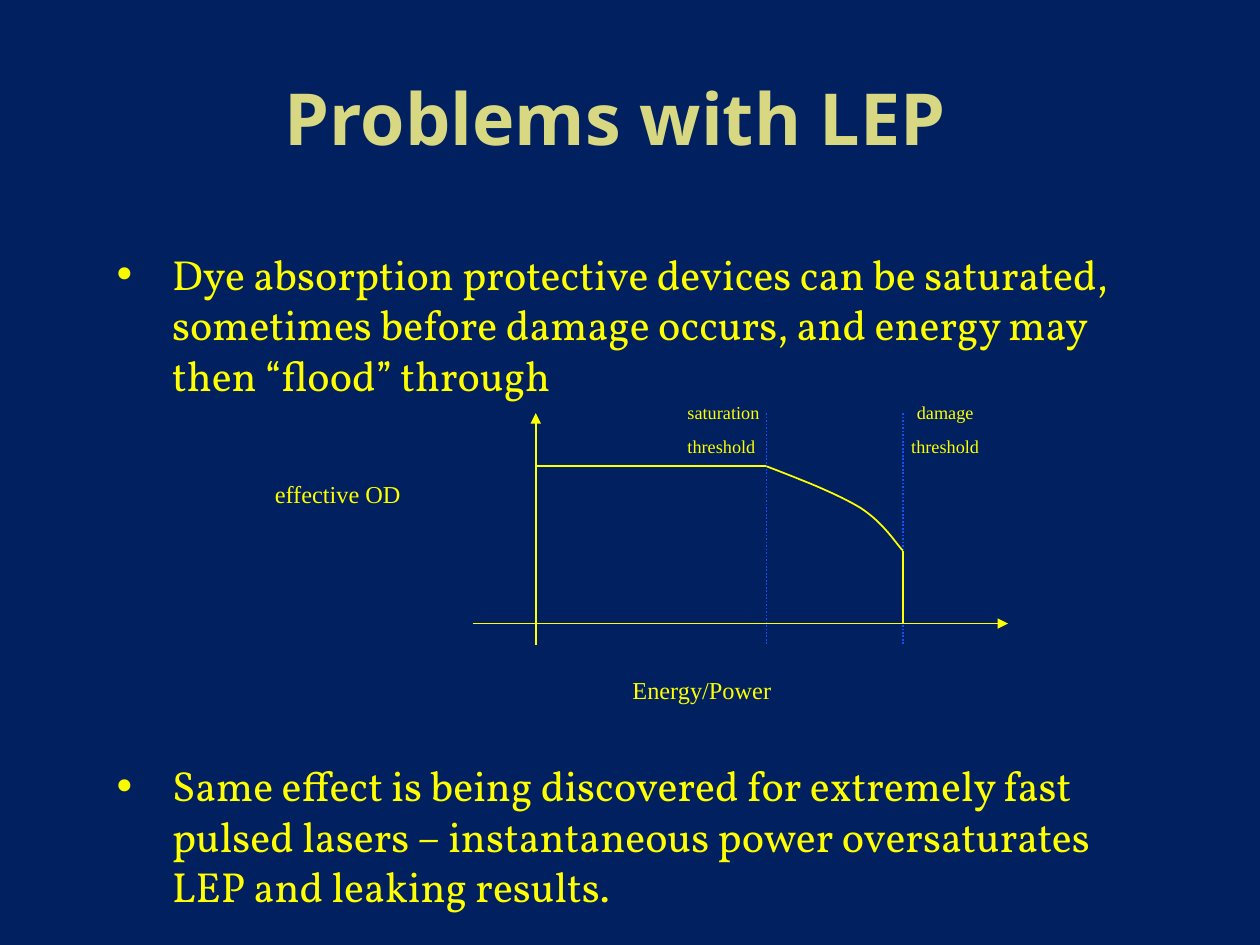
"""Build the slide on saturation and damage thresholds of LEP."""
from lxml import etree
from pptx import Presentation
from pptx.dml.color import RGBColor
from pptx.enum import dml, shapes, text
from pptx.oxml.ns import qn
from pptx.util import Cm, Pt

NAVY, YELLOW, BLUE, KHAKI = "002060", "FFFF00", "114FFB", "D8D883"
LEFT, CENTER = text.PP_ALIGN.LEFT, text.PP_ALIGN.CENTER

TITLE = "Problems with LEP"
BULLETS = [
    "Dye absorption protective devices can be saturated, sometimes before "
    "damage occurs, and energy may then “flood” through",
    "Same effect is being discovered for extremely fast pulsed lasers – "
    "instantaneous power oversaturates LEP and leaking results.",
]
BULLET_GAP = 206

AXIS_X, SATURATION_X, DAMAGE_X = 10.8, 15.45, 18.2
TOP, PLATEAU_Y, DROP_Y, AXIS_Y, BOTTOM = 8.33, 9.4, 11.1, 12.57, 13.0

LABELS = [
    (["effective OD"], (5.29, 8.97, 4.9, 1.27), 24, LEFT),
    (["Energy/Power"], (12.5, 12.91, 5.36, 1.27), 24, LEFT),
    (["saturation", "threshold"], (13.61, 7.62, 3.02, 1.78), 18, LEFT),
    (["damage", "threshold"], (17.62, 7.62, 2.87, 1.78), 18, CENTER),
]
LABEL_SPACING = 0.8
AXES = [
    ((AXIS_X, BOTTOM), (AXIS_X, TOP)),
    ((9.53, AXIS_Y), (20.32, AXIS_Y)),
]
THRESHOLDS = [((x, TOP), (x, BOTTOM)) for x in (SATURATION_X, DAMAGE_X)]
RESPONSE = [
    ((SATURATION_X, PLATEAU_Y), (AXIS_X, PLATEAU_Y)),
    ((DAMAGE_X, AXIS_Y), (DAMAGE_X, DROP_Y)),
]
KNEE = (17.35, 10.24)
CURVES = [
    ((SATURATION_X, PLATEAU_Y), (16.18, 9.68), (16.89, 9.96), KNEE),
    (KNEE, (17.81, 10.54), (18.06, 10.95), (DAMAGE_X, DROP_Y)),
]
CURVE_STEPS = 12


def color(value):
    return RGBColor.from_string(value)


def add_text(slide, lines, box, font, size, fill, align=LEFT, wrap=True):
    shape = slide.shapes.add_textbox(*map(Cm, box))
    frame = shape.text_frame
    frame.text = "\n".join(lines)
    frame.word_wrap = wrap
    for paragraph in frame.paragraphs:
        paragraph.alignment = align
        for run in paragraph.runs:
            run.font.name = font
            run.font.size = Pt(size)
            run.font.color.rgb = color(fill)
    return frame


def add_bullet(paragraph):
    properties = paragraph._p.get_or_add_pPr()
    properties.set("marL", str(Cm(1.52)))
    properties.set("indent", str(-Cm(1.14)))
    bullet_color = etree.SubElement(properties, qn("a:buClr"))
    etree.SubElement(bullet_color, qn("a:srgbClr"), val="F9F900")
    etree.SubElement(properties, qn("a:buSzPct"), val="120000")
    etree.SubElement(properties, qn("a:buFont"), typeface="Times New Roman")
    etree.SubElement(properties, qn("a:buChar"), char="•")


def add_line(slide, ends, fill, dash=None, arrow=False):
    start, end = ends
    line = slide.shapes.add_connector(
        shapes.MSO_CONNECTOR.STRAIGHT, *map(Cm, start + end))
    line.line.color.rgb = color(fill)
    line.line.width = Pt(1)
    if dash:
        line.line.dash_style = dash
    if arrow:
        etree.SubElement(line.line._get_or_add_ln(), qn("a:tailEnd"), type="triangle")
    etree.SubElement(line._element.spPr, qn("a:effectLst"))


def bezier(points, t):
    weights = ((1 - t) ** 3, 3 * t * (1 - t) ** 2, 3 * t * t * (1 - t), t ** 3)
    return tuple(Cm(sum(w * p[axis] for w, p in zip(weights, points)))
                 for axis in (0, 1))


def add_curve(slide):
    points = [bezier(curve, step / CURVE_STEPS)
              for curve in CURVES for step in range(1, CURVE_STEPS + 1)]
    builder = slide.shapes.build_freeform(*bezier(CURVES[0], 0))
    builder.add_line_segments(points, close=False)
    shape = builder.convert_to_shape()
    shape.shadow.inherit = False
    shape.fill.background()
    shape.line.color.rgb = color(YELLOW)
    shape.line.width = Pt(1)


def main():
    presentation = Presentation()
    presentation.slide_width, presentation.slide_height = Cm(25.4), Cm(19.05)
    slide = presentation.slides.add_slide(presentation.slide_layouts[6])
    slide.background.fill.solid()
    slide.background.fill.fore_color.rgb = color(NAVY)

    title = add_text(slide, [TITLE], (4.5, 0.76, 15.82, 3.18),
                     "Noto Sans", 41, KHAKI, CENTER)
    title.vertical_anchor = text.MSO_ANCHOR.MIDDLE
    title.paragraphs[0].runs[0].font.bold = True

    body = add_text(slide, BULLETS, (1.7, 4.88, 21.79, 13.54),
                    "Vollkorn", 24, YELLOW)
    for paragraph in body.paragraphs:
        add_bullet(paragraph)
    body.paragraphs[1].space_before = Pt(BULLET_GAP)

    for ends in AXES:
        add_line(slide, ends, YELLOW, arrow=True)
    for ends in THRESHOLDS:
        add_line(slide, ends, BLUE, dash=dml.MSO_LINE.ROUND_DOT)
    for lines, box, size, align in LABELS:
        label = add_text(slide, lines, box, "Times New Roman", size,
                         YELLOW, align, wrap=False)
        for paragraph in label.paragraphs:
            paragraph.runs[0].font._element.set("baseline", "-25000")
            if len(lines) > 1:
                paragraph.line_spacing = LABEL_SPACING
    for ends in RESPONSE:
        add_line(slide, ends, YELLOW)
    add_curve(slide)

    presentation.save("out.pptx")


if __name__ == "__main__":
    main()
